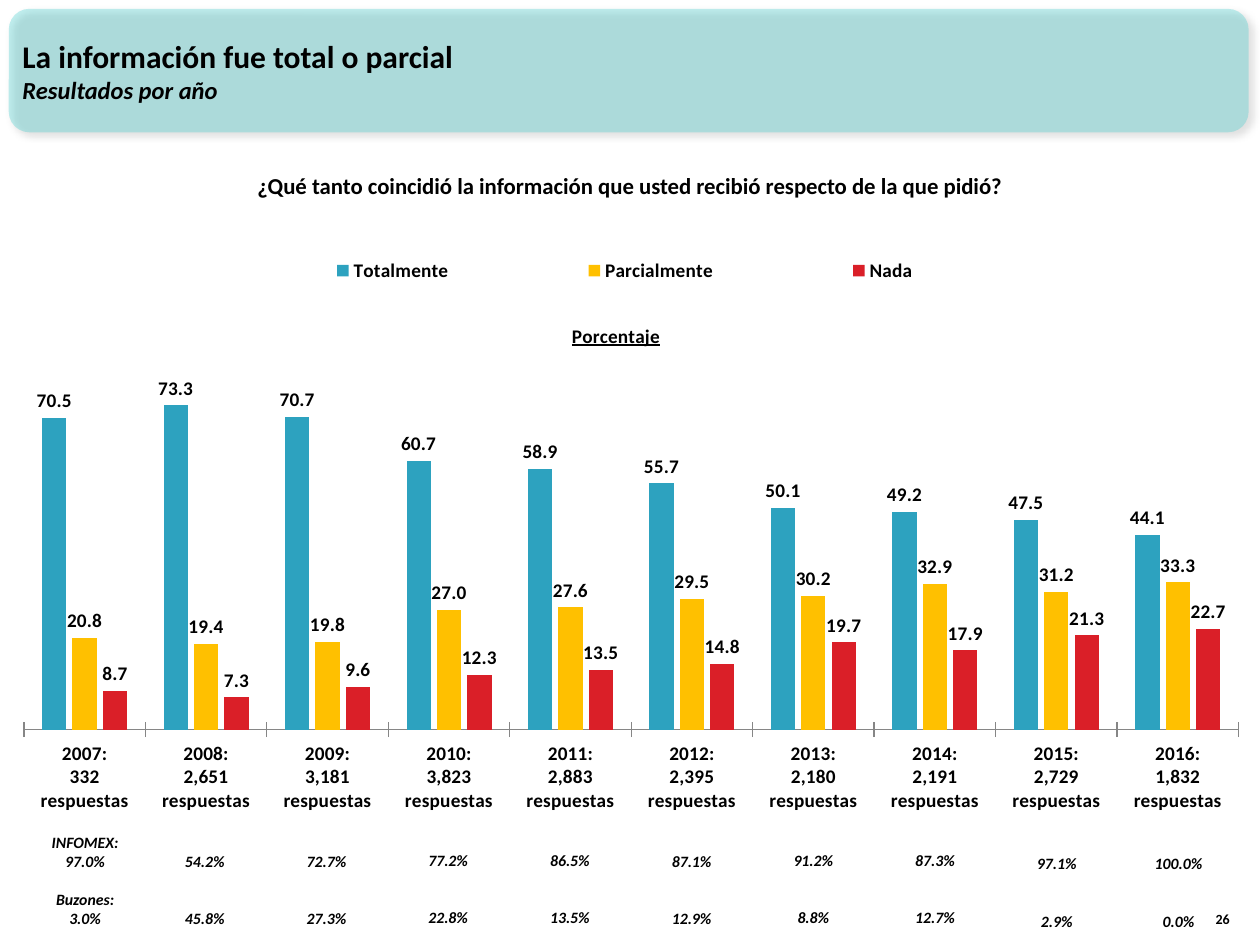
"""Build the slide on how fully the answers matched what was asked, by year."""
from dataclasses import dataclass
from typing import Any

from pptx import Presentation
from pptx.chart.data import CategoryChartData as Data
from pptx.dml.color import RGBColor
from pptx.enum.chart import XL_CHART_TYPE as Kind
from pptx.enum.chart import XL_LABEL_POSITION as Spot
from pptx.enum.chart import XL_LEGEND_POSITION as Side
from pptx.enum.chart import XL_TICK_LABEL_POSITION as Tag
from pptx.enum.chart import XL_TICK_MARK as Tick
from pptx.enum.shapes import MSO_SHAPE as Shape
from pptx.enum.text import MSO_ANCHOR as Anchor
from pptx.enum.text import MSO_AUTO_SIZE as Fit
from pptx.enum.text import PP_ALIGN as Align
from pptx.oxml import parse_xml
from pptx.oxml.ns import nsdecls
from pptx.util import Inches, Pt

BLACK = RGBColor(0x00, 0x00, 0x00)
AQUA = RGBColor(0x33, 0xCC, 0xCC)
BLUE = RGBColor(0x2D, 0xA2, 0xBF)
GOLD = RGBColor(0xFF, 0xC0, 0x00)
RED = RGBColor(0xDA, 0x1F, 0x28)
GREY = RGBColor(0x86, 0x86, 0x86)

BASE = {"name": "Calibri", "bold": True}
PITCH = 0.966


@dataclass
class Line:
    text: str
    size: float
    slant: bool = False
    gap: float = 0


@dataclass
class Box:
    left: float
    top: float
    width: float
    height: float
    lines: list[Line]
    align: Any = Align.CENTER
    anchor: Any = Anchor.TOP
    fit: Any = Fit.NONE
    inset: float = 0.1


@dataclass
class Year:
    name: int
    count: str
    web: str
    mail: str
    top: float = 6.71


@dataclass
class Series:
    name: str
    color: RGBColor
    values: list[float]


YEARS = [
    Year(2007, "332", "97.0%", "3.0%"),
    Year(2008, "2,651", "54.2%", "45.8%"),
    Year(2009, "3,181", "72.7%", "27.3%"),
    Year(2010, "3,823", "77.2%", "22.8%", 6.7),
    Year(2011, "2,883", "86.5%", "13.5%", 6.7),
    Year(2012, "2,395", "87.1%", "12.9%"),
    Year(2013, "2,180", "91.2%", "8.8%", 6.7),
    Year(2014, "2,191", "87.3%", "12.7%", 6.7),
    Year(2015, "2,729", "97.1%", "2.9%", 6.73),
    Year(2016, "1,832", "100.0%", "0.0%", 6.73),
]
SERIES = [
    Series("Totalmente", BLUE,
           [70.5, 73.3, 70.7, 60.7, 58.9, 55.7, 50.1, 49.2, 47.5, 44.1]),
    Series("Parcialmente", GOLD,
           [20.8, 19.4, 19.8, 27.0, 27.6, 29.5, 30.2, 32.9, 31.2, 33.3]),
    Series("Nada", RED,
           [8.7, 7.3, 9.6, 12.3, 13.5, 14.8, 19.7, 17.9, 21.3, 22.7]),
]
TEXTS = [
    Box(0.08, 0.09, 9.17, 0.94,
        [Line("La información fue total o parcial", 18),
         Line("Resultados por año", 14, True)], Align.LEFT, Anchor.MIDDLE),
    Box(9.46, 7.01, 0.4, 0.4, [Line("26", 8)], Align.RIGHT, Anchor.BOTTOM),
    Box(0.89, 1.31, 8.21, 0.32,
        [Line("¿Qué tanto coincidió la información que usted recibió "
              "respecto de la que pidió?", 13)], fit=Fit.SHAPE_TO_FIT_TEXT),
]


def apply(item: Any, values: dict[str, Any]) -> None:
    for key, value in values.items():
        setattr(item, key, value)


def style(font: Any, size: float, **more: Any) -> None:
    apply(font, BASE | {"size": Pt(size)} | more)
    font.color.rgb = BLACK


def write(slide: Any, box: Box) -> None:
    place = map(Inches, (box.left, box.top, box.width, box.height))
    frame = slide.shapes.add_textbox(*place).text_frame
    apply(frame, {"word_wrap": True, "auto_size": box.fit,
                  "vertical_anchor": box.anchor,
                  "margin_left": Inches(box.inset),
                  "margin_right": Inches(box.inset)})
    for num, line in enumerate(box.lines):
        para = frame.add_paragraph() if num else frame.paragraphs[0]
        para.alignment = box.align
        if line.gap:
            para.space_before = Pt(line.gap)
        run = para.add_run()
        run.text = line.text
        style(run.font, line.size, italic=line.slant)


def banner(slide: Any) -> None:
    place = map(Inches, (0.07, 0.07, 9.84, 0.98))
    shape = slide.shapes.add_shape(Shape.ROUNDED_RECTANGLE, *place)
    shape.shadow.inherit = False
    shape.fill.solid()
    shape.fill.fore_color.rgb = AQUA
    shape.line.fill.background()
    tint = shape.element.spPr.xpath("a:solidFill/a:srgbClr")[0]
    tint.append(parse_xml(f'<a:alpha {nsdecls("a")} val="30000"/>'))
    shape.element.spPr.xpath("a:effectLst")[0].append(parse_xml(
        f'<a:outerShdw {nsdecls("a")} blurRad="50800" dist="38100" '
        'dir="2700000" algn="tl" rotWithShape="0"><a:srgbClr val="000000">'
        '<a:alpha val="40000"/></a:srgbClr></a:outerShdw>'))


def settle(part: Any, index: int, inner: bool = False, **spots: float) -> None:
    for old in part.xpath("c:layout"):
        part.remove(old)
    body = '<c:layoutTarget val="inner"/>' if inner else ""
    body += "".join(f'<c:{key}Mode val="edge"/>' for key in "xy")
    body += "".join(f'<c:{key} val="{val}"/>' for key, val in spots.items())
    part.insert(index, parse_xml(
        f'<c:layout {nsdecls("c")}><c:manualLayout>{body}'
        '</c:manualLayout></c:layout>'))


def plot(slide: Any) -> None:
    data = Data(number_format="0.0")
    data.categories = [f"{y.name}:\n{y.count}\nrespuestas" for y in YEARS]
    for item in SERIES:
        data.add_series(item.name, item.values)
    place = map(Inches, (0.02, 1.86, 9.98, 4.8))
    chart = slide.shapes.add_chart(Kind.COLUMN_CLUSTERED, *place, data).chart
    style(chart.font, 11)
    apply(chart, {"has_legend": True, "has_title": True})
    apply(chart.legend, {"position": Side.TOP, "include_in_layout": False})
    run = chart.chart_title.text_frame.paragraphs[0].add_run()
    run.text = "Porcentaje"
    style(run.font, 11, underline=True)
    apply(chart.value_axis, {"visible": False, "minimum_scale": 0,
                             "maximum_scale": 80, "major_unit": 20,
                             "has_major_gridlines": False})
    axis = chart.category_axis
    apply(axis, {"major_tick_mark": Tick.CROSS, "minor_tick_mark": Tick.NONE,
                 "tick_label_position": Tag.LOW})
    axis.format.line.color.rgb = GREY
    bars = chart.plots[0]
    apply(bars, {"gap_width": 150, "overlap": -25,
                 "vary_by_categories": False})
    for bar, item in zip(bars.series, SERIES):
        bar.format.fill.solid()
        bar.format.fill.fore_color.rgb = item.color
        apply(bar.data_labels, {"show_value": True, "number_format": "0.0",
                                "number_format_is_linked": False,
                                "position": Spot.OUTSIDE_END})
        style(bar.data_labels.font, 11)
    title, area, key = (chart.element.xpath(f"c:chart/c:{name}")[0]
                        for name in ("title", "plotArea", "legend"))
    settle(title, 1, x=0.45, y=0.14)
    settle(area, 0, True, x=0.017, y=0.234, w=0.966, h=0.585)
    settle(key, 1, x=0.16, y=0.02, w=0.67, h=0.08)


def shares(slide: Any) -> None:
    first, *rest = YEARS
    write(slide, Box(0.3, 6.56, 0.75, 0.86,
                     [Line(f"INFOMEX: {first.web}", 9, True),
                      Line(f"Buzones: {first.mail}", 9, True, 11)],
                     fit=Fit.SHAPE_TO_FIT_TEXT))
    for num, year in enumerate(rest):
        lines = [Line(year.web, 9, True), Line(year.mail, 9, True, 22)]
        write(slide, Box(1.33 + num * PITCH, year.top, 0.59, 0.71, lines,
                         fit=Fit.SHAPE_TO_FIT_TEXT, inset=0.05))


def main() -> None:
    deck = Presentation()
    apply(deck, {"slide_width": Inches(10), "slide_height": Inches(7.5)})
    slide = deck.slides.add_slide(deck.slide_layouts[6])
    banner(slide)
    for box in TEXTS:
        write(slide, box)
    plot(slide)
    shares(slide)
    deck.save("out.pptx")


if __name__ == "__main__":
    main()
